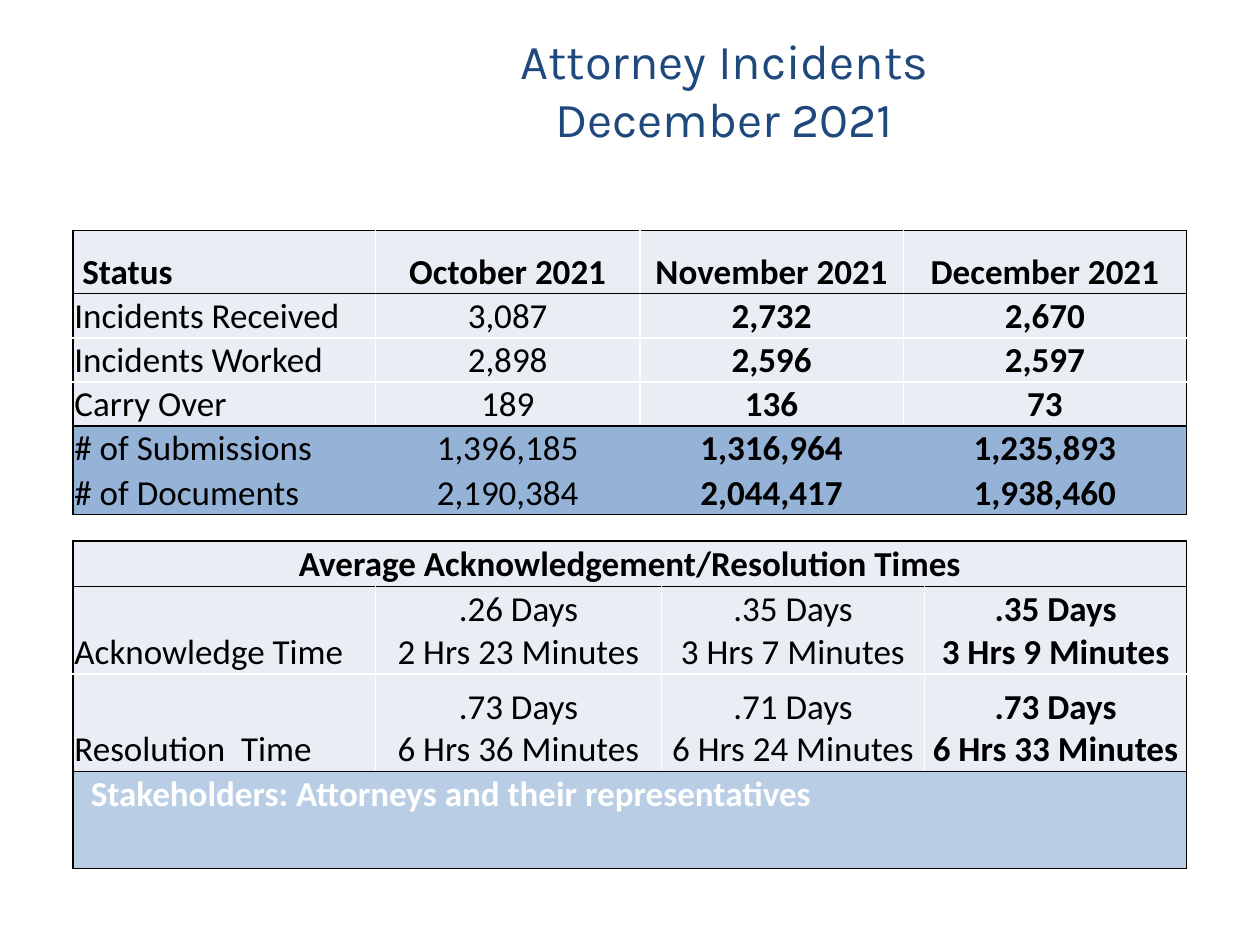
from dataclasses import dataclass

from lxml.etree import SubElement
from pptx import Presentation
from pptx.dml.color import RGBColor as RGB
from pptx.enum.text import MSO_ANCHOR as Anchor, PP_ALIGN as Align
from pptx.oxml.ns import qn
from pptx.util import Cm, Pt


@dataclass(frozen=True)
class Theme:
    title: str = "1F497D"
    ink: str = "000000"
    light: str = "E9EDF4"
    totals: str = "95B3D7"
    stakeholders: str = "B9CDE5"
    white: str = "FFFFFF"
    title_font: str = "Karla"
    table_font: str = "Calibri"
    title_size: float = 27.9
    table_size: int = 20
    gap_size: int = 8


theme = Theme()

# Content: each block is outlined in black; a row is (height in cm, cell texts)
TITLE = ["Attorney Incidents", "December 2021"]
COLUMNS = [6.1, 5.33, 0.43, 4.88, 0.43, 5.28]
MONTHS, TIMES, FULL = (1, 1, 2, 2), (1, 2, 2, 1), (6,)

BLOCKS = [
    dict(spans=MONTHS, bold=(0, 1, 2, 3), fill=theme.light, inner=theme.white, indent=0.16, rows=[
        (1.27, ["Status", "October 2021", "November 2021", "December 2021"])]),
    dict(spans=MONTHS, bold=(2, 3), fill=theme.light, inner=theme.white, rows=[
        (0.89, ["Incidents Received", "3,087", "2,732", "2,670"]),
        (0.89, ["Incidents Worked", "2,898", "2,596", "2,597"]),
        (0.89, ["Carry Over", "189", "136", "73"])]),
    dict(spans=MONTHS, bold=(2, 3), fill=theme.totals, rows=[
        (0.89, ["# of Submissions", "1,396,185", "1,316,964", "1,235,893"]),
        (0.89, ["# of Documents", "2,190,384", "2,044,417", "1,938,460"])]),
    dict(spans=FULL, sides=None, rows=[(0.54, [""])]),
    dict(spans=FULL, bold=(0,), fill=theme.light, first_align=Align.CENTER, rows=[
        (0.91, ["Average Acknowledgement/Resolution Times"])]),
    dict(spans=TIMES, bold=(3,), fill=theme.light, inner=theme.white, rows=[
        (1.77, ["Acknowledge Time", ".26 Days\n2 Hrs 23 Minutes",
                ".35 Days\n3 Hrs 7 Minutes", ".35 Days\n3 Hrs 9 Minutes"]),
        (1.96, ["Resolution  Time", ".73 Days\n6 Hrs 36 Minutes",
                ".71 Days\n6 Hrs 24 Minutes", ".73 Days\n6 Hrs 33 Minutes"])]),
    dict(spans=FULL, bold=(0,), fill=theme.stakeholders, ink=theme.white, indent=0.33,
         anchor=Anchor.TOP, rows=[
             (1.96, ["Stakeholders: Attorneys and their representatives"])]),
]


def add_run(paragraph, text, font, size, color, bold=False):
    run = paragraph.add_run()
    run.text = text
    run.font.name, run.font.size, run.font.bold = font, Pt(size), bold
    run.font.color.rgb = RGB.from_string(color)


def set_borders(cell, edges):
    """Draw each edge in its colour, or clear it where the colour is None."""
    properties = cell._tc.get_or_add_tcPr()
    for side, color in edges.items():
        line = SubElement(properties, qn(f"a:ln{side}"), w=str(Pt(1)))
        if color:
            SubElement(SubElement(line, qn("a:solidFill")), qn("a:srgbClr"), val=color)
        else:
            SubElement(line, qn("a:noFill"))


def write_cell(cell, text, block, position):
    cell.vertical_anchor = block.get("anchor", Anchor.BOTTOM)
    cell.margin_left = Cm(0.03 + (block.get("indent", 0) if position == 0 else 0))
    cell.margin_right = cell.margin_top = Cm(0.03)
    cell.margin_bottom = 0
    frame = cell.text_frame
    if not text:  # the gap row stays thin only with a small type size
        SubElement(frame.paragraphs[0]._p, qn("a:endParaRPr"), sz=str(theme.gap_size * 100))
        return
    for i, words in enumerate(text.split("\n")):
        paragraph = frame.add_paragraph() if i else frame.paragraphs[0]
        paragraph.alignment = Align.CENTER if position else block.get("first_align", Align.LEFT)
        add_run(paragraph, words, theme.table_font, theme.table_size,
                block.get("ink", theme.ink), position in block["bold"])


def fill_row(table, row, texts, block, top, bottom):
    inner, sides = block.get("inner"), block.get("sides", theme.ink)
    start = 0
    for position, (text, span) in enumerate(zip(texts, block["spans"])):
        end = start + span
        edges = dict(L=inner if start else sides,
                     R=inner if end < len(COLUMNS) else sides,
                     T=top, B=bottom)
        for column in range(start, end):
            cell = table.cell(row, column)
            set_borders(cell, edges)
            if "fill" in block:
                cell.fill.solid()
                cell.fill.fore_color.rgb = RGB.from_string(block["fill"])
            else:
                cell.fill.background()
        first = table.cell(row, start)
        if span > 1:
            first.merge(table.cell(row, end - 1))
        write_cell(first, text, block, position)
        start = end


def add_title(slide):
    frame = slide.shapes.add_textbox(Cm(5.08), Cm(0.56), Cm(19.05), Cm(3.1)).text_frame
    frame.word_wrap = True
    frame.vertical_anchor = Anchor.TOP
    frame.margin_left = frame.margin_right = frame.margin_top = frame.margin_bottom = Cm(0.05)
    for i, words in enumerate(TITLE):
        paragraph = frame.add_paragraph() if i else frame.paragraphs[0]
        paragraph.alignment = Align.CENTER
        add_run(paragraph, words, theme.title_font, theme.title_size, theme.title)


def add_incident_table(slide):
    heights = [height for block in BLOCKS for height, _ in block["rows"]]
    table = slide.shapes.add_table(len(heights), len(COLUMNS), Cm(1.47), Cm(4.65),
                                   Cm(sum(COLUMNS)), Cm(sum(heights))).table
    table.first_row = table.horz_banding = False
    for column, width in zip(table.columns, COLUMNS):
        column.width = Cm(width)
    for table_row, height in zip(table.rows, heights):
        table_row.height = Cm(height)

    row = 0
    for block in BLOCKS:
        last = len(block["rows"]) - 1
        for i, (_, texts) in enumerate(block["rows"]):
            top = block.get("inner") if i else theme.ink
            bottom = block.get("inner") if i < last else theme.ink
            fill_row(table, row, texts, block, top, bottom)
            row += 1


def main():
    deck = Presentation()
    deck.slide_width, deck.slide_height = Cm(25.4), Cm(19.05)
    slide = deck.slides.add_slide(deck.slide_layouts[6])
    add_title(slide)
    add_incident_table(slide)
    deck.save("out.pptx")


if __name__ == "__main__":
    main()
